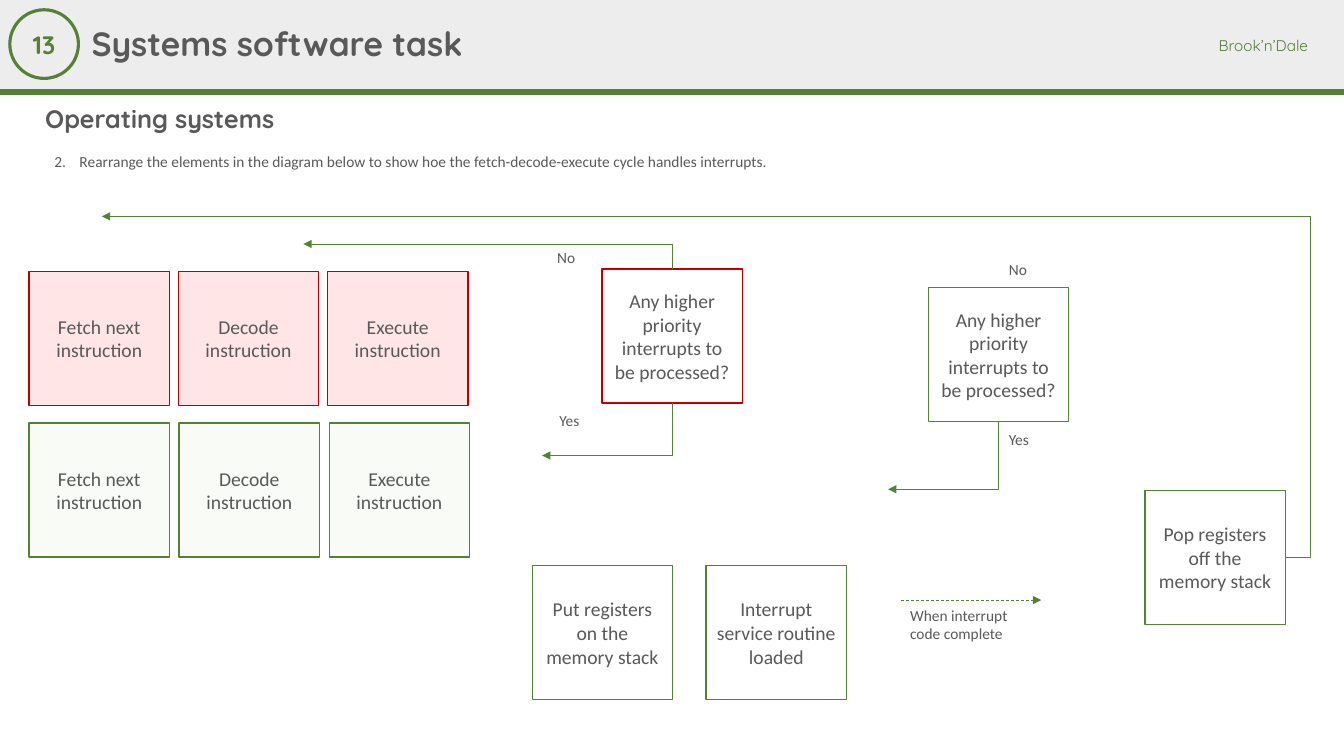
from dataclasses import dataclass
from typing import Optional

from lxml import etree
from pptx import Presentation
from pptx import util as u
from pptx.dml.color import RGBColor
from pptx.enum import dml, shapes, text
from pptx.oxml import ns

GREEN = RGBColor(0x53, 0x81, 0x35)
LEAF = RGBColor(0x54, 0x82, 0x35)
MINT = RGBColor(0xC5, 0xE0, 0xB4)
RED = RGBColor(0xFF, 0, 0)
DARK_RED = RGBColor(0xC0, 0, 0)
GREY = RGBColor(0x59, 0x59, 0x59)
PALE = RGBColor(0xED, 0xED, 0xED)
HEAD_FONT = "Quicksand"
BODY_FONT = "Calibri"
BOX_WIDE, BOX_HIGH = 100.3, 95.8


@dataclass
class Box:
    words: str
    left: float
    top: float
    line: RGBColor = LEAF
    fill: Optional[RGBColor] = None


@dataclass
class Label:
    words: str
    left: float
    top: float
    wide: float
    high: float = 20.6
    wrap: bool = False


@dataclass
class Arrow:
    tip: tuple[float, float]
    start: tuple[float, float]
    form: str = "bentConnector2"
    bend: Optional[int] = None
    dash: bool = False


def add_xml(parent, tag: str, **attrs: str):
    return etree.SubElement(parent, ns.qn(tag), **attrs)


def write(frame, words: str, size: float, font: str = BODY_FONT,
          color: RGBColor = GREY, bold: bool = False,
          align=text.PP_ALIGN.LEFT):
    para = frame.paragraphs[0]
    para.alignment = align
    run = para.add_run()
    run.text = words
    run.font.size = u.Pt(size)
    run.font.name = font
    run.font.bold = bold
    run.font.color.rgb = color
    return para


def add_form(slide, kind, left: float, top: float, wide: float, high: float,
             fill: Optional[RGBColor] = None, line: Optional[RGBColor] = None,
             weight: float = 1):
    form = slide.shapes.add_shape(kind, u.Pt(left), u.Pt(top), u.Pt(wide), u.Pt(high))
    form.shadow.inherit = False
    if fill is None:
        form.fill.background()
    else:
        form.fill.solid()
        form.fill.fore_color.rgb = fill
    if line is None:
        form.line.fill.background()
    else:
        form.line.color.rgb = line
        form.line.width = u.Pt(weight)
    form.text_frame.word_wrap = True
    form.text_frame.vertical_anchor = text.MSO_ANCHOR.MIDDLE
    return form


def add_box(slide, box: Box) -> None:
    form = add_form(slide, shapes.MSO_SHAPE.RECTANGLE, box.left, box.top,
                    BOX_WIDE, BOX_HIGH, box.fill, box.line)
    if box.fill is not None:
        tint = form.fill._xPr.find(".//" + ns.qn("a:srgbClr"))
        add_xml(tint, "a:alpha", val="10000")
    write(form.text_frame, box.words, 14, align=text.PP_ALIGN.CENTER)


def add_text(slide, label: Label):
    frame = slide.shapes.add_textbox(u.Pt(label.left), u.Pt(label.top),
                                     u.Pt(label.wide), u.Pt(label.high)).text_frame
    frame.word_wrap = label.wrap
    frame.auto_size = text.MSO_AUTO_SIZE.SHAPE_TO_FIT_TEXT
    return frame


def add_line(slide, start: tuple[float, float], end: tuple[float, float],
             weight: float, kind=shapes.MSO_CONNECTOR.STRAIGHT):
    line = slide.shapes.add_connector(kind, *(u.Pt(n) for n in (*start, *end)))
    line.line.color.rgb = GREEN
    line.line.width = u.Pt(weight)
    add_xml(line._element.spPr, "a:effectLst")
    return line


def add_arrow(slide, arrow: Arrow) -> None:
    line = add_line(slide, arrow.tip, arrow.start, 0.5, shapes.MSO_CONNECTOR.ELBOW)
    shape = line._element.spPr.find(ns.qn("a:prstGeom"))
    shape.set("prst", arrow.form)
    if arrow.bend is not None:
        add_xml(shape.find(ns.qn("a:avLst")), "a:gd", name="adj1", fmla=f"val {arrow.bend}")
    if arrow.dash:
        line.line.dash_style = dml.MSO_LINE.DASH
    add_xml(line.line._get_or_add_ln(), "a:headEnd", type="triangle")


def add_head(slide) -> None:
    add_form(slide, shapes.MSO_SHAPE.RECTANGLE, 0, 0, 960, 65.5, PALE)
    add_line(slide, (0, 65.5), (960, 65.5), 4.5)
    write(add_text(slide, Label("", 863.3, 22.3, 87.8)), "Brook’n’Dale", 11, HEAD_FONT, GREEN)
    badge = add_form(slide, shapes.MSO_SHAPE.OVAL, 7, 7, 49, 49, None, GREEN, 2.25)
    write(badge.text_frame, "13", 18, HEAD_FONT, GREEN, True, text.PP_ALIGN.CENTER)
    title = slide.shapes.title
    title._element.getparent().append(title._element)
    title.left, title.top, title.width, title.height = (u.Pt(n) for n in (58.3, 6.5, 742.3, 52.6))
    topic = slide.shapes.add_textbox(u.Pt(25.2), u.Pt(71.3), u.Pt(411), u.Pt(28.8))
    for form, words, size in ((title, "Systems software task", 24),
                              (topic, "Operating systems", 18)):
        frame = form.text_frame
        frame.word_wrap = True
        frame.auto_size = text.MSO_AUTO_SIZE.NONE
        frame.vertical_anchor = text.MSO_ANCHOR.MIDDLE
        write(frame, words, size, HEAD_FONT, bold=True).line_spacing = 0.9


def add_task(slide) -> None:
    frame = add_text(slide, Label("", 31.7, 105.1, 536.4, wrap=True))
    props = frame.paragraphs[0]._p.get_or_add_pPr()
    props.set("marL", str(u.Pt(18)))
    props.set("indent", str(u.Pt(-18)))
    add_xml(props, "a:buAutoNum", type="arabicPeriod", startAt="2")
    write(frame, "Rearrange the elements in the diagram below to show hoe the "
                 "fetch-decode-execute cycle handles interrupts.", 11)


STEPS = ("Fetch next instruction", "Decode instruction", "Execute instruction")
ROWS = ((193.8, 106.6, DARK_RED, RED), (302.2, 107.2, LEAF, MINT))
ASK = "Any higher priority interrupts to be processed?"
BOXES = [Box(step, 20.8 + i * gap, top, line, fill)
         for top, gap, line, fill in ROWS for i, step in enumerate(STEPS)]
BOXES += [
    Box(ASK, 430, 192.2, DARK_RED),
    Box("Put registers on the memory stack", 380.2, 404),
    Box("Interrupt service routine loaded", 504.4, 404),
    Box(ASK, 663.2, 205.5),
    Box("Pop registers off the memory stack", 817.8, 350.3),
]
ARROWS = (
    Arrow((216.7, 174.3), (480.2, 192.2)),
    Arrow((387.2, 325.4), (480.2, 288)),
    Arrow((634.4, 349.5), (713.4, 301.3)),
    Arrow((72.8, 154.6), (918.1, 398.2), "bentConnector3", 102100),
    Arrow((743.8, 428.6), (643.2, 428.6), "line", dash=True),
)
LABELS = (
    Label("When interrupt code complete", 643, 429.3, 100.8, 33.9, True),
    Label("No", 713.5, 182.4, 27.4),
    Label("Yes", 392.4, 290.2, 29.5),
    Label("No", 390.9, 173.7, 27.4),
    Label("Yes", 713.5, 303.8, 29.5),
)


def main() -> None:
    deck = Presentation()
    deck.slide_width, deck.slide_height = u.Pt(960), u.Pt(540)
    slide = deck.slides.add_slide(deck.slide_layouts.get_by_name("Title Only"))
    add_head(slide)
    for box in BOXES:
        add_box(slide, box)
    for arrow in ARROWS:
        add_arrow(slide, arrow)
    for label in LABELS:
        write(add_text(slide, label), label.words, 11)
    add_task(slide)
    deck.save("out.pptx")


if __name__ == "__main__":
    main()
